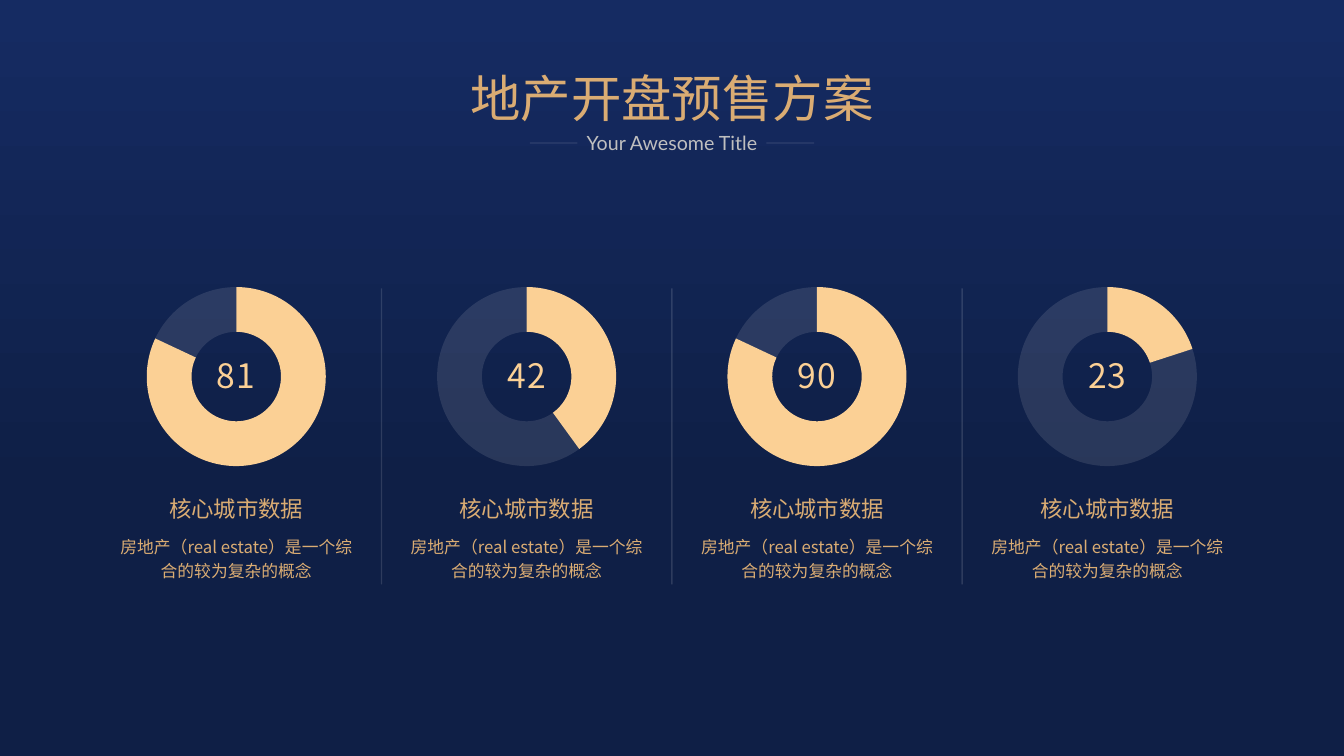
from lxml.etree import SubElement
from pptx import Presentation
from pptx.chart.data import CategoryChartData
from pptx.dml.color import RGBColor as RGB
from pptx.enum.chart import XL_CHART_TYPE as CT
from pptx.enum.shapes import MSO_CONNECTOR as CONN
from pptx.enum.text import MSO_ANCHOR as ANCHOR, MSO_AUTO_SIZE as AUTO, PP_ALIGN as ALIGN
from pptx.oxml import parse_xml
from pptx.oxml.ns import nsdecls, qn
from pptx.util import Pt

COLORS = {"navy": "152B62", "night": "0F1F46", "gold": "DAAC73", "cream": "EAD7B8",
          "sand": "FBD095", "gray": "BFBFBF", "rule": "D9D9D9", "track": "E7E6E6",
          "white": "FFFFFF"}
CJK = "Noto Sans CJK SC"
CENTER, PITCH = 168.8, 207.4
RINGS = [("81", 82), ("42", 40), ("90", 82), ("23", 20)]
HEADING = "核心城市数据"
BODY = "房地产（real estate）是一个综合的较为复杂的概念"


def color(name):
    return RGB.from_string(COLORS[name])


class Deck:
    """Holds the text style and the current slide, and draws elements on it."""

    def __init__(self, prs):
        self.s = prs.slides.add_slide(prs.slide_layouts[5])
        self.frame = {"word_wrap": True, "auto_size": AUTO.NONE,
                      "vertical_anchor": ANCHOR.MIDDLE}

    def gradient(self, fill, stops):
        fill.gradient()
        fill.gradient_angle = 270
        for stop, (position, name) in zip(fill.gradient_stops, stops):
            stop.position = position
            stop.color.rgb = color(name)

    def fade(self, fill, name, percent):
        fill.solid()
        fill.fore_color.rgb = color(name)
        for clr in fill._xPr.iter(qn("a:srgbClr")):
            SubElement(clr, qn("a:alpha"), val=str(percent * 1000))

    def set_text(self, sp, text, size, name, font=CJK, spacing=None, tracking=None,
                 anchor=ANCHOR.MIDDLE):
        tf = sp.text_frame
        for key, value in {**self.frame, "vertical_anchor": anchor}.items():
            setattr(tf, key, value)
        p = tf.paragraphs[0]
        for key, value in {"alignment": ALIGN.CENTER, "line_spacing": spacing}.items():
            setattr(p, key, value)
        r = p.add_run()
        r.text = text
        for key, value in {"size": Pt(size), "bold": False, "name": font}.items():
            setattr(r.font, key, value)
        r.font.color.rgb = color(name)
        rpr = r._r.get_or_add_rPr()
        rpr.find(qn("a:latin")).addnext(
            parse_xml(f'<a:ea {nsdecls("a")} typeface="{font}"/>'))
        if tracking:
            rpr.set("spc", str(tracking))
        return r

    def title(self, text, x, y, w, h, size):
        sp = self.s.shapes.title
        for key, value in {"left": x, "top": y, "width": w, "height": h}.items():
            setattr(sp, key, Pt(value))
        r = self.set_text(sp, text, size, "gold")
        self.gradient(r.font.fill, [(0.01, "gold"), (0.74, "cream")])

    def text(self, text, x, y, w, h, size, name, **style):
        sp = self.s.shapes.add_textbox(Pt(x), Pt(y), Pt(w), Pt(h))
        self.set_text(sp, text, size, name, **style)

    def line(self, x1, y1, x2, y2, name, width, percent):
        c = self.s.shapes.add_connector(CONN.STRAIGHT, Pt(x1), Pt(y1), Pt(x2), Pt(y2))
        c.line.width = Pt(width)
        self.fade(c.line.fill, name, percent)
        SubElement(c._element.spPr, qn("a:effectLst"))

    def ring(self, value, x, y, w, h):
        data = CategoryChartData()
        data.categories = ["1", "2"]
        data.add_series("Series 1", [value, 100 - value])
        chart = self.s.shapes.add_chart(
            CT.DOUGHNUT, Pt(x), Pt(y), Pt(w), Pt(h), data).chart
        for key, setting in {"has_title": False, "has_legend": False}.items():
            setattr(chart, key, setting)
        for key, setting in {"name": "Calibri", "size": Pt(10)}.items():
            setattr(chart.font, key, setting)
        plot = chart.plots[0]
        plot.vary_by_categories = True
        for i, (name, percent) in enumerate([("sand", 100), ("track", 12)]):
            fmt = plot.series[0].points[i].format
            self.fade(fmt.fill, name, percent)
            fmt.line.fill.background()
        space = chart._chartSpace
        space.find(qn("c:txPr")).addprevious(parse_xml(
            f'<c:spPr {nsdecls("c", "a")}><a:noFill/><a:ln><a:noFill/></a:ln></c:spPr>'))
        for hole in space.iter(qn("c:holeSize")):
            hole.set("val", "90")
        area = space.chart.plotArea
        for layout in area.findall(qn("c:layout")):
            area.remove(layout)
        layout = parse_xml(f'<c:layout {nsdecls("c")}><c:manualLayout/></c:layout>')
        for tag, setting in {"layoutTarget": "inner", "xMode": "edge", "yMode": "edge",
                             "x": 0.11, "y": 0.07, "w": 0.78, "h": 0.87}.items():
            SubElement(layout[0], qn(f"c:{tag}"), val=str(setting))
        area.insert(0, layout)


def main():
    prs = Presentation()
    prs.slide_width, prs.slide_height = Pt(960), Pt(540)
    deck = Deck(prs)
    deck.gradient(deck.s.background.fill, [(0.01, "navy"), (0.65, "night")])
    deck.title("地产开盘预售方案", 180.5, 44, 599, 51, 36)
    deck.text("Your Awesome Title", 288.5, 90, 383, 24.5, 14, "gray", font="Lato")
    for x in (378.5, 547.5):
        deck.line(x, 102.2, x + 34, 102.2, "rule", 0.5, 25)
    for i, (label, value) in enumerate(RINGS):
        cx = CENTER + i * PITCH
        if i:
            deck.line(cx - PITCH / 2, 206, cx - PITCH / 2, 417.5, "white", 1, 12)
        deck.ring(value, cx - 82, 194.5, 164, 147.6)
        deck.text(label, cx - 38.5, 250, 77, 36, 24, "sand", tracking=90)
        deck.text(HEADING, cx - 85.5, 350, 171, 26.5, 16, "gold")
        deck.text(BODY, cx - 94, 376.5, 188, 41, 12, "gold", spacing=Pt(17.6),
                  anchor=ANCHOR.TOP)
    prs.save("out.pptx")


if __name__ == "__main__":
    main()
